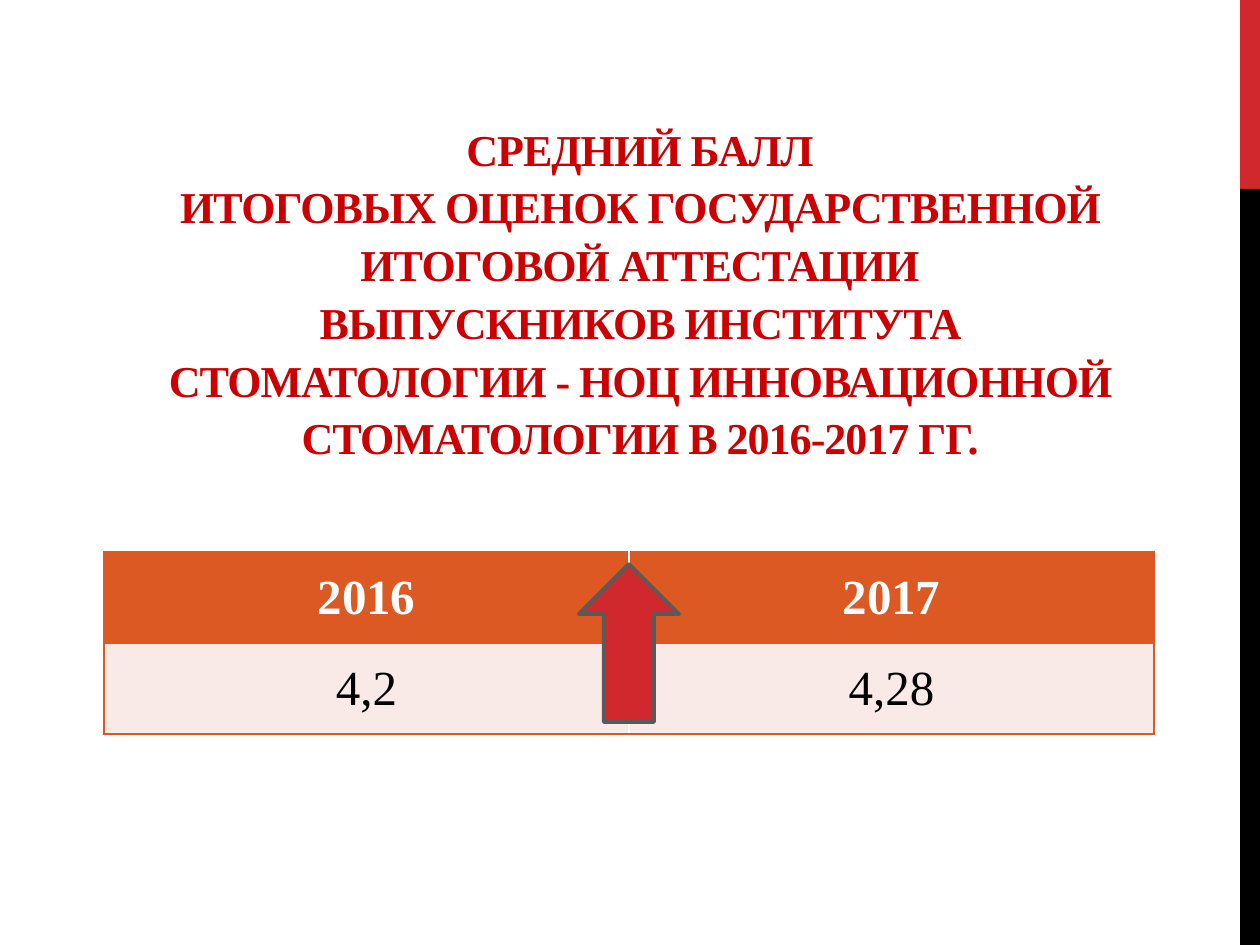
from dataclasses import dataclass

from lxml.etree import SubElement
from pptx import Presentation
from pptx.dml.color import RGBColor
from pptx.enum.shapes import MSO_SHAPE
from pptx.enum.text import MSO_ANCHOR, MSO_AUTO_SIZE, PP_ALIGN
from pptx.oxml.ns import qn
from pptx.util import Inches, Pt

HEADING = (
    "СРЕДНИЙ БАЛЛ\v"
    "ИТОГОВЫХ ОЦЕНОК ГОСУДАРСТВЕННОЙ ИТОГОВОЙ АТТЕСТАЦИИ\v"
    "ВЫПУСКНИКОВ ИНСТИТУТА СТОМАТОЛОГИИ - НОЦ ИННОВАЦИОННОЙ "
    "СТОМАТОЛОГИИ В 2016-2017 ГГ."
)
SCORES = [("2016", "2017"), ("4,2", "4,28")]

# left, top, width, height in px
SLIDE_SIZE = (1260, 945)
RED_BAR = (1240, 0, 20, 189)
BLACK_BAR = (1240, 189, 20, 756)
HEADING_BOX = (134, 324, 1012, 146)
SCORE_BOX = (104, 552, 1050, 182)
ARROW_BOX = (579, 564, 100, 158)


@dataclass(frozen=True)
class Theme:
    font: str = "Times New Roman"
    red: str = "D1282E"
    black: str = "000000"
    white: str = "FFFFFF"
    heading: str = "CC0000"
    orange: str = "DC5924"
    pale: str = "F9EAE8"
    grey: str = "5A5A5A"
    heading_size: float = 25.2
    heading_leading: int = 33
    heading_spacing: int = -60  # hundredths of a point
    score_size: int = 28
    border: int = 1
    arrow_line: float = 2.25


THEME = Theme()


def px(*lengths):
    return [Inches(length / 126) for length in lengths]


def style_font(font, size, color, bold):
    font.name = THEME.font
    font.size = Pt(size)
    font.bold = bold
    font.color.rgb = RGBColor.from_string(color)


def add_filled(slide, preset, box, color):
    shape = slide.shapes.add_shape(preset, *px(*box))
    shape.shadow.inherit = False
    shape.fill.solid()
    shape.fill.fore_color.rgb = RGBColor.from_string(color)
    shape.line.fill.background()
    return shape


def set_borders(cell, sides):
    """Draw the listed sides; borders go ahead of the fill in the cell XML."""
    properties = cell._tc.get_or_add_tcPr()
    for index, side in enumerate(sides):
        line = SubElement(properties, qn(f"a:ln{side}"), w=str(Pt(THEME.border)))
        fill = SubElement(line, qn("a:solidFill"))
        SubElement(fill, qn("a:srgbClr"), val=THEME.orange)
        properties.insert(index, line)


def add_heading(slide):
    title = slide.shapes.title
    title.left, title.top, title.width, title.height = px(*HEADING_BOX)
    frame = title.text_frame
    frame.text = HEADING
    frame.word_wrap = True
    frame.auto_size = MSO_AUTO_SIZE.NONE
    frame.vertical_anchor = MSO_ANCHOR.BOTTOM
    paragraph = frame.paragraphs[0]
    paragraph.alignment = PP_ALIGN.CENTER
    paragraph.line_spacing = Pt(THEME.heading_leading)
    for run in paragraph.runs:
        style_font(run.font, THEME.heading_size, THEME.heading, True)
        run._r.get_or_add_rPr().set("spc", str(THEME.heading_spacing))


def add_scores(slide):
    columns = len(SCORES[0])
    table = slide.shapes.add_table(len(SCORES), columns, *px(*SCORE_BOX)).table
    for row, values in enumerate(SCORES):
        is_header = row == 0
        for column, value in enumerate(values):
            cell = table.cell(row, column)
            cell.text = value
            cell.vertical_anchor = MSO_ANCHOR.MIDDLE
            cell.fill.solid()
            cell.fill.fore_color.rgb = RGBColor.from_string(
                THEME.orange if is_header else THEME.pale)
            paragraph = cell.text_frame.paragraphs[0]
            paragraph.alignment = PP_ALIGN.CENTER
            style_font(paragraph.runs[0].font, THEME.score_size,
                       THEME.white if is_header else THEME.black, is_header)
            outer = (["L"] if column == 0 else []) + (["R"] if column == columns - 1 else [])
            set_borders(cell, outer + ["T", "B"])


def main():
    presentation = Presentation()
    presentation.slide_width, presentation.slide_height = px(*SLIDE_SIZE)
    slide = presentation.slides.add_slide(presentation.slide_layouts[5])
    add_filled(slide, MSO_SHAPE.RECTANGLE, RED_BAR, THEME.red)
    add_filled(slide, MSO_SHAPE.RECTANGLE, BLACK_BAR, THEME.black)
    add_heading(slide)
    add_scores(slide)
    arrow = add_filled(slide, MSO_SHAPE.UP_ARROW, ARROW_BOX, THEME.red)
    arrow.line.color.rgb = RGBColor.from_string(THEME.grey)
    arrow.line.width = Pt(THEME.arrow_line)
    presentation.save("out.pptx")


if __name__ == "__main__":
    main()
